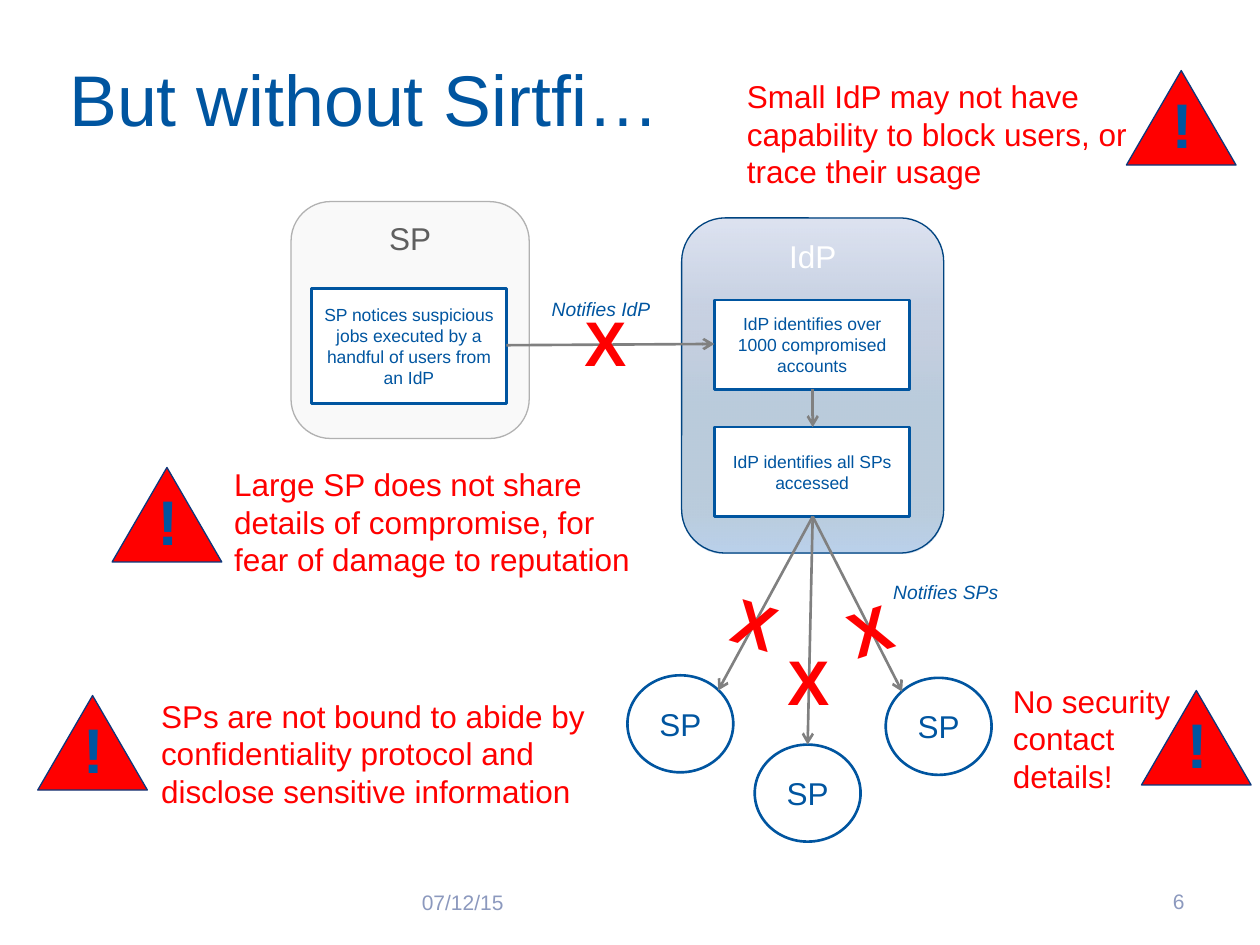
from lxml import etree
from pptx import Presentation
from pptx.dml.color import RGBColor
from pptx.enum.shapes import MSO_CONNECTOR, MSO_SHAPE
from pptx.enum.text import MSO_ANCHOR, MSO_AUTO_SIZE, PP_ALIGN
from pptx.oxml import parse_xml
from pptx.oxml.ns import nsdecls, qn
from pptx.util import Inches, Pt

COLORS = {
    "blue": "0055A0", "red": "FF0000", "white": "FFFFFF", "arrow": "808080",
    "footer": "8C99BE", "sp_text": "5F5F5F", "sp_fill": "E0E0E0",
    "sp_line": "B1B1B1", "idp_line": "004480", "warning_line": "0C377B",
}
IDP_STOPS = [(0, "8498CC"), (25, "375A98"), (38, "2A4D8B"), (55, "00437D"),
             (80, "00427C"), (88, "004683"), (100, "0055B9")]


def rgb(name):
    return RGBColor.from_string(COLORS[name])


def inches(*values):
    return [Inches(v) for v in values]


def write_text(s, text, size=18, color="blue", bold=False, italic=False,
               align=PP_ALIGN.LEFT, anchor=MSO_ANCHOR.TOP, wrap=True):
    tf = s.text_frame
    tf.word_wrap = wrap
    tf.auto_size = MSO_AUTO_SIZE.NONE
    tf.vertical_anchor = anchor
    p = tf.paragraphs[0]
    p.alignment = align
    r = p.add_run()
    r.text = text
    r.font.name = "Arial"
    r.font.size = Pt(size)
    r.font.bold = bold
    r.font.italic = italic
    r.font.color.rgb = rgb(color)


def add_text(shapes, box, text, rotation=0, **fmt):
    s = shapes.add_textbox(*inches(*box))
    s.rotation = rotation
    write_text(s, text, **fmt)


def add_shape(shapes, kind, box, fill="white", line="blue", width=1.5):
    s = shapes.add_shape(kind, *inches(*box))
    s.shadow.inherit = False
    s.fill.solid()
    s.fill.fore_color.rgb = rgb(fill)
    s.line.color.rgb = rgb(line)
    s.line.width = Pt(width)
    return s


def add_node(shapes, kind, box, text, size):
    s = add_shape(shapes, kind, box)
    write_text(s, text, size=size, align=PP_ALIGN.CENTER, anchor=MSO_ANCHOR.MIDDLE)


def add_panel(shapes, box, text, fill, line, color):
    s = add_shape(shapes, MSO_SHAPE.ROUNDED_RECTANGLE, box, fill, line, 0.75)
    write_text(s, text, color=color, align=PP_ALIGN.CENTER)
    return s


def set_alpha(s, percent):
    clr = s.fill._xPr.find(qn("a:solidFill"))[0]
    etree.SubElement(clr, qn("a:alpha"), val=str(percent * 1000))


def set_gradient(s, stops, percent):
    """Replace the solid fill with a translucent top-to-bottom gradient."""
    gs = "".join(
        f'<a:gs pos="{pos * 1000}"><a:srgbClr val="{color}">'
        f'<a:alpha val="{percent * 1000}"/></a:srgbClr></a:gs>'
        for pos, color in stops)
    grad = parse_xml(f'<a:gradFill {nsdecls("a")} rotWithShape="1"><a:gsLst>{gs}</a:gsLst>'
                     '<a:lin ang="5400000" scaled="0"/></a:gradFill>')
    sp_pr = s.fill._xPr
    sp_pr.replace(sp_pr.find(qn("a:solidFill")), grad)


def add_arrow(shapes, start, end):
    c = shapes.add_connector(MSO_CONNECTOR.STRAIGHT, *inches(*start, *end))
    c.line.color.rgb = rgb("arrow")
    c.line.width = Pt(1.5)
    etree.SubElement(c.line._get_or_add_ln(), qn("a:tailEnd"), type="arrow")
    etree.SubElement(c._element.spPr, qn("a:effectLst"))


def add_warning(shapes, left, top):
    group = shapes.add_group_shape().shapes
    add_shape(group, MSO_SHAPE.ISOSCELES_TRIANGLE, (left, top, 0.87, 0.75),
              "red", "warning_line", 0.75)
    add_text(group, (left + 0.26, top + 0.07, 0.37, 0.71), "!", size=36, bold=True)


def add_title(s, text):
    s.left, s.top, s.width, s.height = inches(0.5, 0.26, 9, 1.03)
    tf = s.text_frame
    tf.margin_left = tf.margin_right = tf.margin_top = tf.margin_bottom = Inches(0.05)
    write_text(s, text, size=41, anchor=MSO_ANCHOR.MIDDLE)


def main():
    prs = Presentation()
    prs.slide_width, prs.slide_height = inches(10, 7.5)
    slide = prs.slides.add_slide(prs.slide_layouts[5])
    shapes = slide.shapes

    idp = add_panel(shapes, (5.41, 1.73, 2.08, 2.66), "IdP", "white", "idp_line", "white")
    set_gradient(idp, IDP_STOPS, 27)
    sp = add_panel(shapes, (2.31, 1.6, 1.89, 1.88), "SP", "sp_fill", "sp_line", "sp_text")
    set_alpha(sp, 18)

    add_title(shapes.title, "But without Sirtfi…")
    footer = dict(size=12, color="footer", anchor=MSO_ANCHOR.MIDDLE)
    add_text(shapes, (3.25, 6.96, 2.33, 0.4), "07/12/15", **footer)
    add_text(shapes, (8.95, 6.95, 0.55, 0.4), "6", align=PP_ALIGN.RIGHT, **footer)

    for left, top, height, text in [
        (2.47, 2.29, 0.91,
         "SP notices suspicious jobs executed by a handful of users from an IdP"),
        (5.67, 2.38, 0.71, "IdP identifies over 1000 compromised accounts"),
        (5.67, 3.39, 0.71, "IdP identifies all SPs accessed"),
    ]:
        add_node(shapes, MSO_SHAPE.FLOWCHART_PROCESS, (left, top, 1.55, height), text, 10)
    for left, top in [(4.98, 5.36), (5.99, 5.91), (7.03, 5.38)]:
        add_node(shapes, MSO_SHAPE.OVAL, (left, top, 0.84, 0.77), "SP", 18)

    add_arrow(shapes, (4.02, 2.74), (5.67, 2.73))
    add_arrow(shapes, (6.45, 3.09), (6.45, 3.39))
    for end in [(5.7, 5.48), (6.41, 5.91), (7.16, 5.49)]:
        add_arrow(shapes, (6.45, 4.1), end)

    for box, text in [((4.28, 2.31, 1.02, 0.29), "Notifies IdP"),
                      ((6.99, 4.56, 1.08, 0.29), "Notifies SPs")]:
        add_text(shapes, box, text, size=11, italic=True, wrap=False)

    for left, top, width, text in [
        (1.76, 3.64, 3.34,
         "Large SP does not share details of compromise, for fear of damage to reputation"),
        (5.83, 0.56, 3.6,
         "Small IdP may not have capability to block users, or trace their usage"),
        (1.18, 5.48, 3.6,
         "SPs are not bound to abide by confidentiality protocol and "
         "disclose sensitive information"),
        (7.94, 5.36, 1.47, "No security contact details!"),
    ]:
        add_text(shapes, (left, top, width, 1.01), text, color="red")

    for left, top in [(0.89, 3.71), (0.3, 5.52), (8.94, 0.56), (9.06, 5.48)]:
        add_warning(shapes, left, top)

    for left, top, rotation in [(4.54, 2.36, 0), (5.74, 4.57, 17),
                                (6.15, 5.05, 0), (6.64, 4.67, 341.7)]:
        add_text(shapes, (left, top, 0.37, 0.71), "X", rotation,
                 size=36, color="red", bold=True)

    prs.save("out.pptx")


if __name__ == "__main__":
    main()
